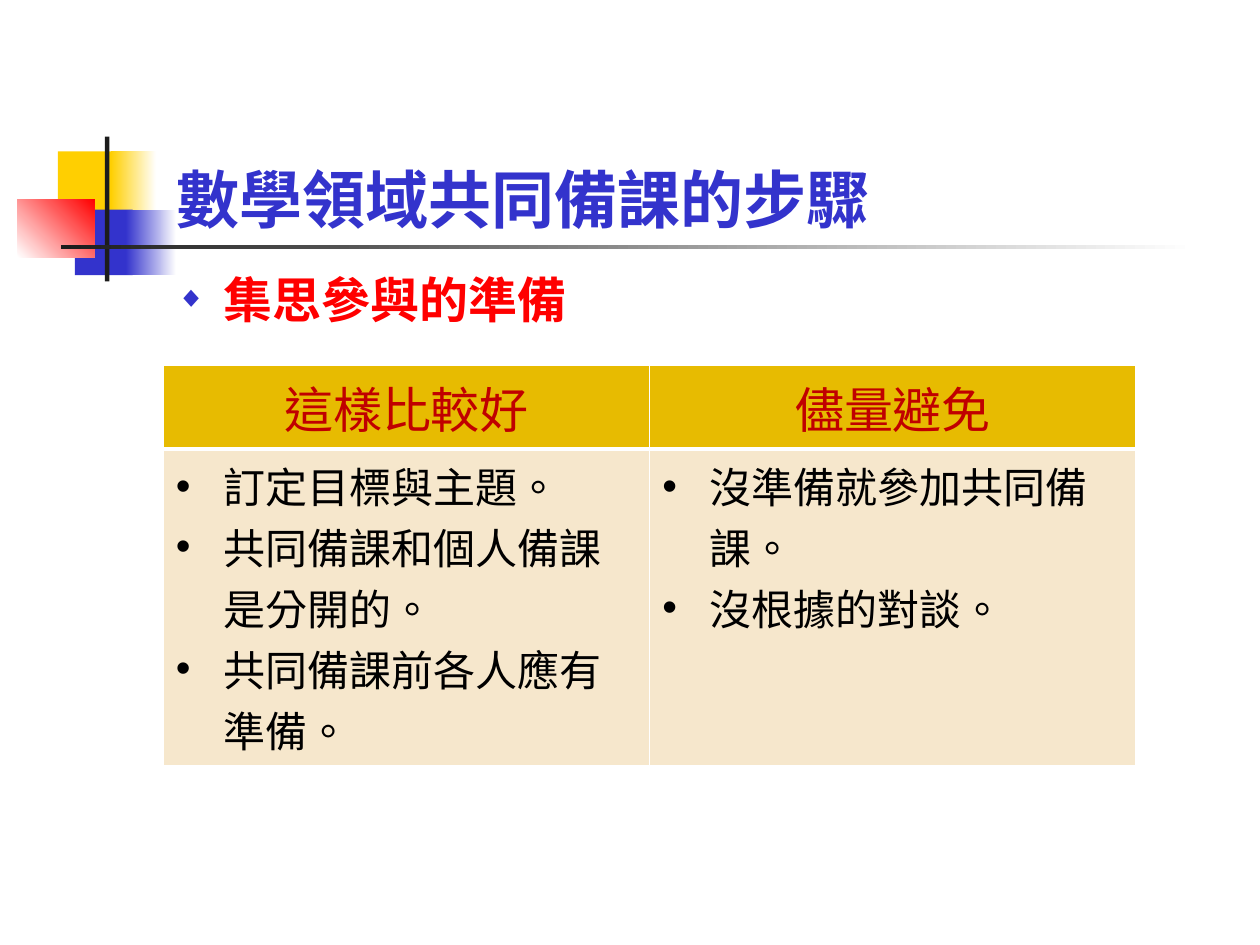
from lxml.etree import SubElement
from pptx import Presentation
from pptx.dml.color import RGBColor
from pptx.enum.shapes import MSO_SHAPE
from pptx.enum.text import MSO_ANCHOR, MSO_AUTO_SIZE, PP_ALIGN
from pptx.oxml.ns import qn
from pptx.util import Pt

COLORS = {
    "gold": "FFCF01", "blue": "3333CC", "red": "FF0000", "ink": "1C1C1C",
    "white": "FFFFFF", "header": "E7BB01", "body": "F6E7CC",
    "heading": "C00000", "text": "000000",
}
LATIN, CHINESE = "Karla", "Noto Sans CJK SC"
BLOCKS = [
    (33.1, 86.5, 34.6, 37.4, "gold", None, 0),
    (63.4, 86.5, 25.9, 37.4, "gold", "white", 0),
    (42.8, 119.8, 33.1, 37.4, "blue", None, 0),
    (72, 119.8, 28.8, 37.4, "blue", "white", 0),
    (10.1, 113.8, 43.9, 33.1, "white", "red", 45),
    (60, 78, 2.5, 82.8, "ink", None, 0),
    (34.9, 140, 648, 2.6, "ink", "white", 0),
]
COLUMNS = [
    ("這樣比較好", ["訂定目標與主題。", "共同備課和個人備課是分開的。", "共同備課前各人應有準備。"]),
    ("儘量避免", ["沒準備就參加共同備課。", "沒根據的對談。"]),
]
INDENT = Pt(27)


def color(name):
    return RGBColor.from_string(COLORS[name])


def add_block(page, left, top, width, height, start, end, angle):
    block = page.shapes.add_shape(MSO_SHAPE.RECTANGLE, Pt(left), Pt(top), Pt(width), Pt(height))
    block.shadow.inherit = False
    block.line.fill.background()
    if end is None:
        block.fill.solid()
        block.fill.fore_color.rgb = color(start)
        return
    block.fill.gradient()
    block.fill.gradient_angle = angle
    for stop, name, position in zip(block.fill.gradient_stops, (start, end), (0, 1)):
        stop.color.rgb = color(name)
        stop.position = position


def write(para, text, tint, asian, **formats):
    span = para.add_run()
    span.text = text
    for key, value in formats.items():
        setattr(span.font, key, value)
    span.font.color.rgb = color(tint)
    properties = span._r.get_or_add_rPr()
    properties.set("lang", "zh-TW")
    SubElement(properties, qn("a:ea"), typeface=asian)


def add_bullet(para, symbol, tint=None, percent=100):
    properties = para._p.get_or_add_pPr()
    properties.set("marL", str(INDENT))
    properties.set("indent", str(-INDENT))
    if tint:
        holder = SubElement(properties, qn("a:buClr"))
        SubElement(holder, qn("a:srgbClr"), val=COLORS[tint])
    SubElement(properties, qn("a:buSzPct"), val=str(percent * 1000))
    SubElement(properties, qn("a:buFont"), typeface="Arial")
    SubElement(properties, qn("a:buChar"), char=symbol)


def place(box, left, top, width, height, anchor):
    tree = box._element.getparent()
    tree.append(box._element)
    bounds = {"left": left, "top": top, "width": width, "height": height}
    for key, value in bounds.items():
        setattr(box, key, Pt(value))
    frame = box.text_frame
    settings = {"word_wrap": True, "auto_size": MSO_AUTO_SIZE.NONE, "vertical_anchor": anchor}
    for key, value in settings.items():
        setattr(frame, key, value)
    return frame.paragraphs[0]


def style_cell(cell, fill, bottom):
    properties = cell._tc.get_or_add_tcPr()
    for side, width in {"lnL": 1, "lnR": 1, "lnT": 1, "lnB": bottom}.items():
        line = SubElement(properties, qn(f"a:{side}"), w=str(Pt(width)))
        solid = SubElement(line, qn("a:solidFill"))
        SubElement(solid, qn("a:srgbClr"), val=COLORS["white"])
    cell.fill.solid()
    cell.fill.fore_color.rgb = color(fill)


def add_comparison(page):
    table = page.shapes.add_table(2, 2, Pt(93.3), Pt(208.8), Pt(556), Pt(228)).table
    for row, height in zip(table.rows, (46, 180)):
        row.height = Pt(height)
    for index, (heading, points) in enumerate(COLUMNS):
        table.columns[index].width = Pt(278)
        top, below = table.cell(0, index), table.cell(1, index)
        style_cell(top, "header", 3)
        style_cell(below, "body", 1)
        top.vertical_anchor = MSO_ANCHOR.MIDDLE
        para = top.text_frame.paragraphs[0]
        para.alignment = PP_ALIGN.CENTER
        write(para, heading, "heading", CHINESE, name=LATIN, size=Pt(28), bold=False)
        frame = below.text_frame
        for number, point in enumerate(points):
            para = frame.add_paragraph() if number else frame.paragraphs[0]
            add_bullet(para, "•")
            write(para, point, "text", CHINESE, name=LATIN, size=Pt(24), bold=False)


def main():
    deck = Presentation()
    deck.slide_width, deck.slide_height = Pt(720), Pt(540)
    page = deck.slides.add_slide(deck.slide_layouts[1])
    for block in BLOCKS:
        add_block(page, *block)

    title = place(page.shapes.title, 93.6, 48.5, 610.6, 90, MSO_ANCHOR.BOTTOM)
    title.alignment = PP_ALIGN.LEFT
    write(title, "數學領域共同備課的步驟", "blue", LATIN, name=LATIN, size=Pt(36), bold=True)

    topic = place(page.placeholders[1], 93.6, 156.6, 573.1, 33.8, MSO_ANCHOR.TOP)
    topic.line_spacing = 0.8
    topic.space_before = Pt(5.6)
    add_bullet(topic, "◆", "blue", 60)
    write(topic, "集思參與的準備", "red", CHINESE, name=CHINESE, size=Pt(28), bold=True)

    add_comparison(page)
    deck.save("out.pptx")


if __name__ == "__main__":
    main()
